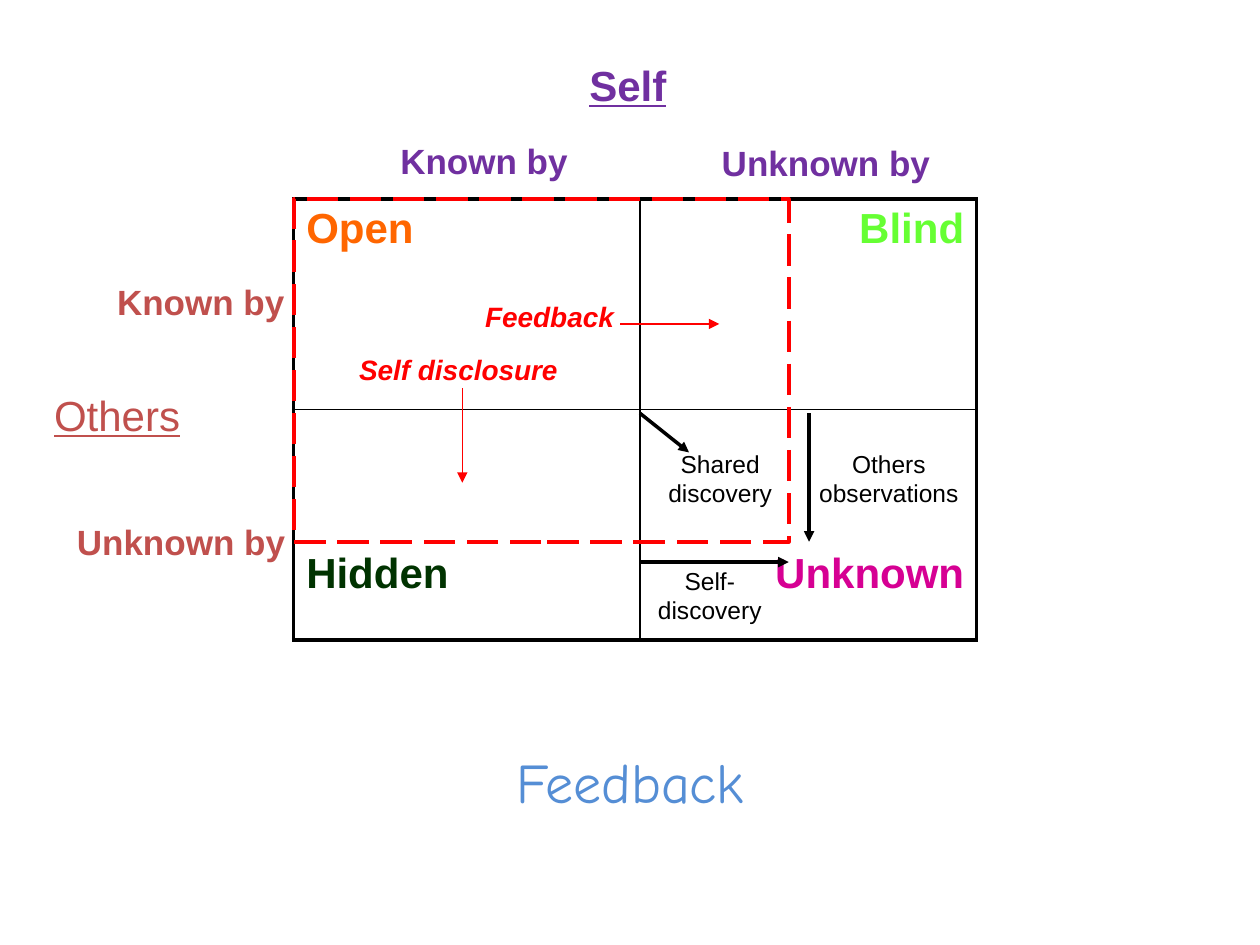
import pptx
import pptx.util
import pptx.dml.color
import pptx.enum.dml
import pptx.enum.shapes
import pptx.enum.text
import pptx.oxml
import pptx.oxml.ns
from collections import namedtuple

Cm = pptx.util.Cm
Pt = pptx.util.Pt
RGBColor = pptx.dml.color.RGBColor
Align = pptx.enum.text.PP_ALIGN
Anchor = pptx.enum.text.MSO_ANCHOR

PURPLE = RGBColor(0x70, 0x30, 0xA0)
BRICK = RGBColor(0xC0, 0x50, 0x4D)
RED = RGBColor(0xFF, 0x00, 0x00)
BLACK = RGBColor(0x00, 0x00, 0x00)
ORANGE = RGBColor(0xFF, 0x66, 0x00)
LIME = RGBColor(0x66, 0xFF, 0x33)
FOREST = RGBColor(0x00, 0x33, 0x00)
MAGENTA = RGBColor(0xD6, 0x00, 0x93)
BLUE = RGBColor(0x55, 0x8E, 0xD5)

# Regions, in centimetres
Box = namedtuple("Box", "left top width height")
SELF_BOX = Box(5.92, 1.07, 13.77, 2.74)
OTHERS_BOX = Box(0.84, 4.01, 5.08, 8.89)
WINDOW_BOX = Box(5.92, 4.01, 13.77, 8.89)
FOOTER_BOX = Box(9.91, 14.94, 5.59, 1.63)


def write(frame, text, size, color, font="Arial", bold=False, italic=False,
          underline=False, align=Align.LEFT):
    """Fill a text frame, one paragraph per line of text."""
    for index, line in enumerate(text.split("\n")):
        paragraph = frame.paragraphs[0] if index == 0 else frame.add_paragraph()
        paragraph.alignment = align
        run = paragraph.add_run()
        run.text = line
        run.font.name = font
        run.font.size = Pt(size)
        run.font.bold = bold
        run.font.italic = italic
        run.font.underline = underline
        run.font.color.rgb = color


def add_label(slide, box, x, y, width, height, text, size, color,
              anchor=Anchor.TOP, **text_format):
    label = slide.shapes.add_textbox(
        Cm(box.left + x), Cm(box.top + y), Cm(width), Cm(height))
    frame = label.text_frame
    frame.word_wrap = False
    frame.auto_size = pptx.enum.text.MSO_AUTO_SIZE.SHAPE_TO_FIT_TEXT
    frame.vertical_anchor = anchor
    write(frame, text, size, color, **text_format)


def add_arrow(slide, box, start, end, color, weight):
    arrow = slide.shapes.add_connector(
        pptx.enum.shapes.MSO_CONNECTOR.STRAIGHT,
        Cm(box.left + start[0]), Cm(box.top + start[1]),
        Cm(box.left + end[0]), Cm(box.top + end[1]))
    arrow.line.color.rgb = color
    arrow.line.width = Pt(weight)
    head = pptx.oxml.parse_xml(
        f'<a:tailEnd {pptx.oxml.ns.nsdecls("a")} type="triangle"/>')
    arrow.line._get_or_add_ln().append(head)
    arrow._element.spPr.append(
        pptx.oxml.parse_xml(f'<a:effectLst {pptx.oxml.ns.nsdecls("a")}/>'))


def set_borders(cell, weights):
    for side, weight in weights.items():
        cell._tc.get_or_add_tcPr().append(pptx.oxml.parse_xml(
            f'<a:ln{side} {pptx.oxml.ns.nsdecls("a")} w="{Pt(weight)}">'
            f'<a:solidFill><a:srgbClr val="{BLACK}"/></a:solidFill>'
            f'</a:ln{side}>'))


def add_quadrants(slide, box):
    column_widths, row_heights = (6.98, 6.79), (4.24, 4.65)
    areas = [[("Open", ORANGE), ("Blind", LIME)],
             [("Hidden", FOREST), ("Unknown", MAGENTA)]]
    outer, inner = 2.25, 1
    table = slide.shapes.add_table(
        2, 2, *(Cm(length) for length in box)).table
    table.first_row = table.horz_banding = False
    for column, width in zip(table.columns, column_widths):
        column.width = Cm(width)
    for r, row_areas in enumerate(areas):
        table.rows[r].height = Cm(row_heights[r])
        for c, (name, color) in enumerate(row_areas):
            cell = table.cell(r, c)
            set_borders(cell, {"L": inner if c else outer,
                               "R": outer if c else inner,
                               "T": inner if r else outer,
                               "B": outer if r else inner})
            cell.fill.background()
            if r:
                cell.vertical_anchor = Anchor.BOTTOM
                cell.margin_bottom = Cm(0.85)
            write(cell.text_frame, name, 24, color, bold=True,
                  align=Align.RIGHT if c else Align.LEFT)


def add_window(slide, box):
    add_quadrants(slide, box)

    # Enlarged open area
    open_area = slide.shapes.add_shape(
        pptx.enum.shapes.MSO_SHAPE.RECTANGLE,
        Cm(box.left), Cm(box.top), Cm(9.98), Cm(6.91))
    open_area.shadow.inherit = False
    open_area.fill.background()
    open_area.line.color.rgb = RED
    open_area.line.width = Pt(2.25)
    open_area.line.dash_style = pptx.enum.dml.MSO_LINE.LONG_DASH

    # Ways to enlarge it
    for x, y, width, text in [(1.07, 2.98, 4.52, "Self disclosure"),
                              (3.61, 1.91, 3.1, "Feedback")]:
        add_label(slide, box, x, y, width, 0.94, text, 16, RED,
                  bold=True, italic=True)
    for start, end in [((3.4, 3.81), (3.4, 5.72)),
                       ((6.58, 2.52), (8.58, 2.52))]:
        add_arrow(slide, box, start, end, RED, 0.75)

    # Discoveries in the unknown area
    for x, y, width, text in [(7.19, 4.91, 2.82, "Shared\ndiscovery"),
                              (10.21, 4.91, 3.58, "Others\nobservations"),
                              (6.98, 7.27, 2.82, "Self-\ndiscovery")]:
        add_label(slide, box, x, y, width, 1.45, text, 14, BLACK,
                  anchor=Anchor.MIDDLE, align=Align.CENTER)
    for start, end in [((6.98, 4.32), (7.97, 5.11)),
                       ((10.39, 4.32), (10.39, 6.91)),
                       ((6.98, 7.32), (9.98, 7.32))]:
        add_arrow(slide, box, start, end, BLACK, 2)


def add_self_headings(slide, box):
    add_label(slide, box, 5.71, 0, 2.06, 1.27, "Self", 24, PURPLE,
              bold=True, underline=True)
    add_label(slide, box, 1.9, 1.62, 3.91, 1.12, "Known by", 20, PURPLE, bold=True)
    add_label(slide, box, 8.38, 1.65, 4.75, 1.12, "Unknown by", 20, PURPLE, bold=True)


def add_others_headings(slide, box):
    add_label(slide, box, 0, 3.71, 3.25, 1.27, "Others", 24, BRICK, underline=True)
    add_label(slide, box, 1.27, 1.53, 3.91, 1.12, "Known by", 20, BRICK, bold=True)
    add_label(slide, box, 0.46, 6.35, 4.75, 1.12, "Unknown by", 20, BRICK, bold=True)


def add_footer(slide, box):
    add_label(slide, box, 0, 0, box.width, box.height, "Feedback", 32, BLUE,
              font="Comic Neue", align=Align.CENTER)


def main():
    deck = pptx.Presentation()
    deck.slide_width, deck.slide_height = Cm(25.4), Cm(19.05)
    slide = deck.slides.add_slide(deck.slide_layouts[6])
    add_window(slide, WINDOW_BOX)
    add_self_headings(slide, SELF_BOX)
    add_others_headings(slide, OTHERS_BOX)
    add_footer(slide, FOOTER_BOX)
    deck.save("out.pptx")


if __name__ == "__main__":
    main()
